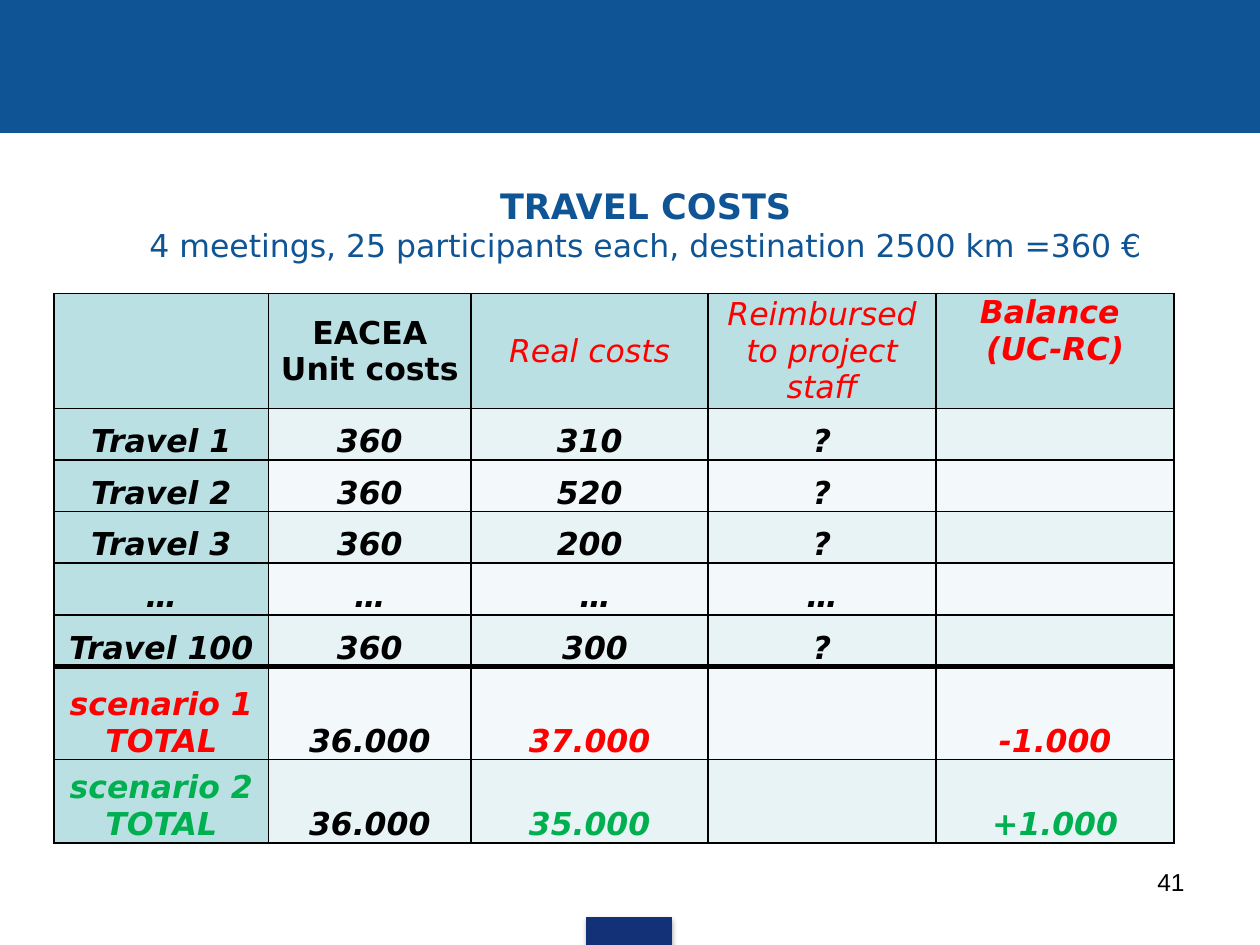
"""Build the travel costs slide with its unit cost and real cost table."""
from lxml.etree import SubElement as Sub
from pptx import Presentation
from pptx.dml.color import RGBColor
from pptx.enum.shapes import MSO_SHAPE as Shape
from pptx.enum.text import MSO_ANCHOR as Anchor, PP_ALIGN as Align
from pptx.oxml.ns import qn
from pptx.util import Inches, Pt

BLUE = RGBColor(0x0F, 0x54, 0x94)
NAVY = RGBColor(0x13, 0x31, 0x76)
BLACK = RGBColor(0, 0, 0)
RED = RGBColor(0xFF, 0, 0)
GREEN = RGBColor(0, 0xB0, 0x50)
TEAL = RGBColor(0xBB, 0xE0, 0xE3)
PALE = RGBColor(0xE7, 0xF3, 0xF4)
LIGHT = RGBColor(0xF3, 0xF9, 0xFA)
SANS = "DejaVu Sans"


def add_run(para, text, size, color, bold=False, italic=False, face=SANS):
    run = para.add_run()
    run.text = text
    font = run.font
    font.name, font.size = face, Pt(size)
    font.bold, font.italic = bold, italic
    font.color.rgb = color


def add_line(cell, side, width):
    line = Sub(cell._tc.get_or_add_tcPr(), qn(f"a:ln{side}"), w=str(Pt(width)))
    Sub(Sub(line, qn("a:solidFill")), qn("a:srgbClr"), val=str(BLACK))


prs = Presentation()
prs.slide_width, prs.slide_height = Inches(10), Inches(7.5)
slide = prs.slides.add_slide(prs.slide_layouts[6])
shapes = slide.shapes

for x, y, w, h, color in [(0, 0, 10, 1.05, BLUE), (4.66, 7.28, 0.67, 0.22, NAVY)]:
    bar = shapes.add_shape(Shape.RECTANGLE, Inches(x), Inches(y), Inches(w), Inches(h))
    bar.shadow.inherit = False
    bar.fill.solid()
    bar.fill.fore_color.rgb = color
    bar.line.color.rgb = color
    bar.line.width = Pt(0.75)

glow = Sub(bar._element.spPr.find(qn("a:effectLst")), qn("a:outerShdw"),
           blurRad=str(Pt(3.1)), dist=str(Pt(1.8)), dir="5400000", rotWithShape="0")
tint = Sub(glow, qn("a:srgbClr"), val=str(BLACK))
Sub(tint, qn("a:alpha"), val="35000")

title = shapes.add_textbox(Inches(0.43), Inches(1.23), Inches(9), Inches(1.1))
frame = title.text_frame
frame.word_wrap = True
frame.vertical_anchor = Anchor.MIDDLE
para = frame.paragraphs[0]
para.alignment = Align.CENTER
props = para._p.get_or_add_pPr()
props.set("marL", str(Inches(0.39)))
props.set("indent", "0")
add_run(para, "TRAVEL COSTS", 20, BLUE, bold=True)
para.add_line_break()
add_run(para, "4 meetings, 25 participants each, destination 2500 km =360 €", 18, BLUE)

number = shapes.add_textbox(Inches(7.17), Inches(6.83), Inches(2.33), Inches(0.52))
number.text_frame.word_wrap = True
para = number.text_frame.paragraphs[0]
para.alignment = Align.RIGHT
add_run(para, "41", 14, BLACK, face="Arial")

rows = [
    ["", "EACEA\nUnit costs", "Real costs", "Reimbursed to project staff", "Balance \n(UC-RC)"],
    ["Travel 1", "360", "310", "?", ""],
    ["Travel 2", "360", "520", "?", ""],
    ["Travel 3", "360", "200", "?", ""],
    ["…", "…", " …", "…", ""],
    ["Travel 100", "360", " 300", "?", ""],
    ["scenario 1 TOTAL", "36.000", "37.000", "", "-1.000"],
    ["scenario 2 TOTAL", "36.000", "35.000", "", "+1.000"],
]
inks = {0: RED, 6: RED, 7: GREEN}
widths = [1.7, 1.61, 1.88, 1.81, 1.89]
heights = [0.88] + [0.41] * 5 + [0.74, 0.66]

table = shapes.add_table(len(rows), len(widths), Inches(0.43), Inches(2.33),
                         Inches(sum(widths)), Inches(sum(heights))).table
for col, width in zip(table.columns, widths):
    col.width = Inches(width)
for row, height in zip(table.rows, heights):
    row.height = Inches(height)

for r, texts in enumerate(rows):
    for c, text in enumerate(texts):
        cell = table.cell(r, c)
        add_line(cell, "L", 1)
        add_line(cell, "R", 1)
        add_line(cell, "T", 3 if r == 6 else 1)
        add_line(cell, "B", 3 if r == 5 else 1)
        cell.fill.solid()
        cell.fill.fore_color.rgb = TEAL if r == 0 or c == 0 else PALE if r % 2 else LIGHT
        if not text:
            continue
        cell.margin_left = cell.margin_right = cell.margin_top = Inches(0.01)
        cell.margin_bottom = 0
        cell.vertical_anchor = Anchor.BOTTOM if r else Anchor.TOP if c == 4 else Anchor.MIDDLE
        color = BLACK if c == 1 else inks.get(r, BLACK)
        bold = r > 0 or c in (1, 4)
        italic = r > 0 or c > 1
        for n, part in enumerate(text.split("\n")):
            frame = cell.text_frame
            para = frame.add_paragraph() if n else frame.paragraphs[0]
            para.alignment = Align.CENTER
            add_run(para, part, 18, color, bold, italic)

prs.save("out.pptx")
